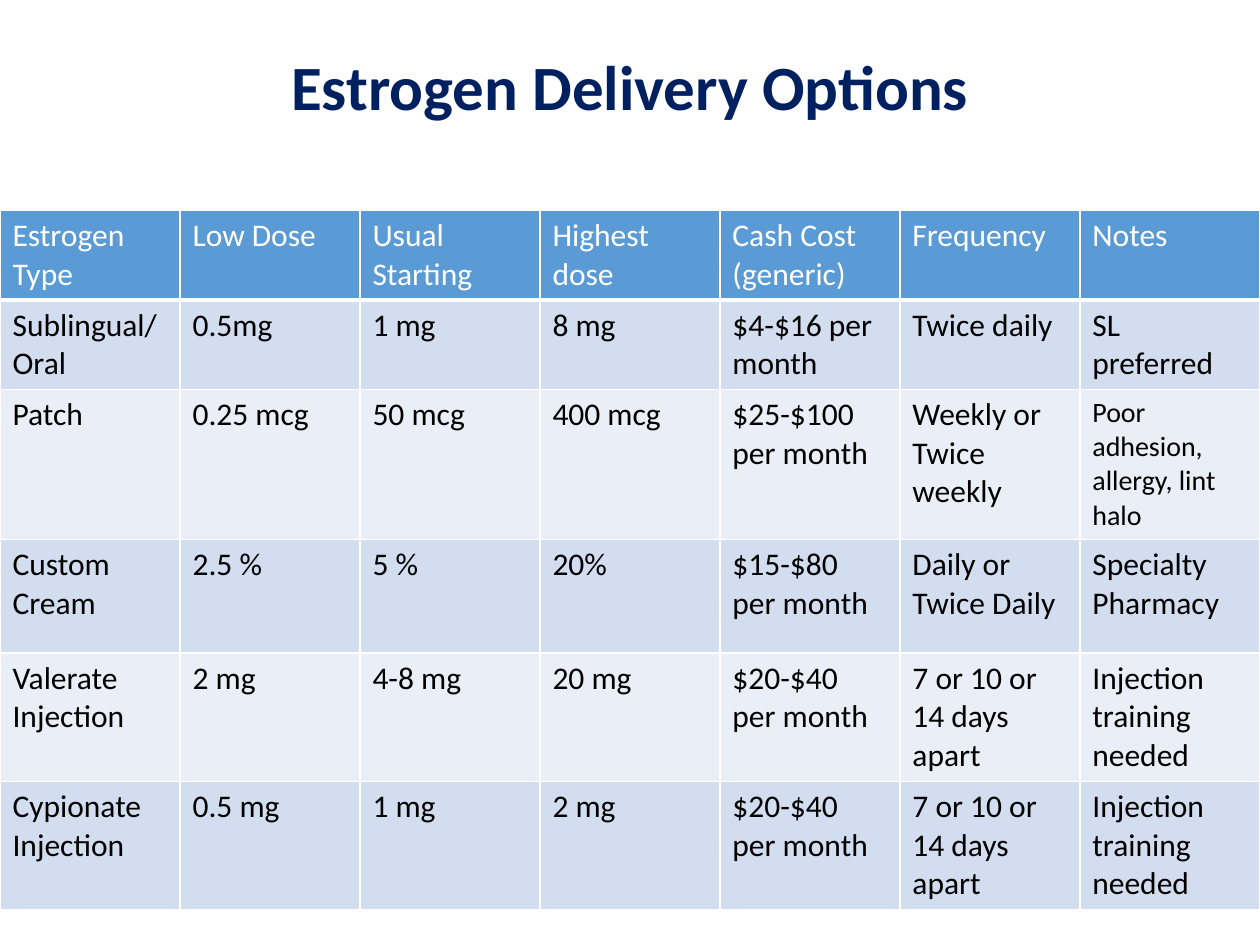
import pptx
import pptx.dml.color
import pptx.enum.text
import pptx.oxml
import pptx.oxml.ns
import pptx.util
from pptx.util import Inches

FONT = "Calibri"
HEADER = ["Estrogen Type", "Low Dose", "Usual Starting", "Highest dose",
          "Cash Cost\n(generic)", "Frequency", "Notes"]
OPTIONS = [
    ["Sublingual/Oral", "0.5mg", "1 mg", "8 mg", "$4-$16 per month",
     "Twice daily", "SL preferred"],
    ["Patch", "0.25 mcg", "50 mcg", "400 mcg", "$25-$100 per month",
     "Weekly or Twice weekly", "Poor adhesion, allergy, lint halo"],
    ["Custom Cream", "2.5 %", "5 %", "20%", "$15-$80 per month",
     "Daily or Twice Daily", "Specialty Pharmacy"],
    ["Valerate Injection", "2 mg", "4-8 mg", "20 mg", "$20-$40 per month",
     "7 or 10 or 14 days apart", "Injection training needed"],
    ["Cypionate Injection", "0.5 mg", "1 mg", "2 mg", "$20-$40 per month",
     "7 or 10 or 14 days apart", "Injection training needed"],
]
ROW_HEIGHTS = [0.71, 0.71, 1.19, 0.9, 1.02, 1.02]
SMALL_CELLS = {(2, 6)}


def rgb(color):
    """Return the colour for a hex string."""
    return pptx.dml.color.RGBColor.from_string(color)


def style_font(font, size, color, bold=False):
    """Set the typeface, size, colour and weight of a font."""
    font.name = FONT
    font.size = pptx.util.Pt(size)
    font.bold = bold
    font.color.rgb = rgb(color)


def set_borders(cell, color, bottom_width):
    """Draw a one-point border on a cell, with its own bottom width."""
    tc_pr = cell._tc.get_or_add_tcPr()
    for i, (side, width) in enumerate(
            [("L", 1), ("R", 1), ("T", 1), ("B", bottom_width)]):
        tc_pr.insert(i, pptx.oxml.parse_xml(
            f'<a:ln{side} {pptx.oxml.ns.nsdecls("a")} w="{pptx.util.Pt(width)}">'
            f'<a:solidFill><a:srgbClr val="{color}"/></a:solidFill></a:ln{side}>'))


def add_title(s, left, top, width, height):
    """Add the centred slide title."""
    tf = s.shapes.add_textbox(left, top, width, height).text_frame
    tf.word_wrap = False
    p = tf.paragraphs[0]
    p.text = "Estrogen Delivery Options"
    p.alignment = pptx.enum.text.PP_ALIGN.CENTER
    style_font(p.font, 36, "002060", bold=True)


def fill_cell(cell, text, size, color, fill, bottom_width):
    """Set the text, fill and borders of a table cell."""
    cell.text = text
    for p in cell.text_frame.paragraphs:
        style_font(p.font, size, color)
    cell.fill.solid()
    cell.fill.fore_color.rgb = rgb(fill)
    set_borders(cell, "FFFFFF", bottom_width)


def add_options_table(s, left, top, width, height):
    """Add the table of delivery options with equal columns and banded rows."""
    rows = [HEADER] + OPTIONS
    table = s.shapes.add_table(
        len(rows), len(HEADER), left, top, width, height).table
    for column in table.columns:
        column.width = width // len(HEADER)
    for i, row in enumerate(rows):
        table.rows[i].height = Inches(ROW_HEIGHTS[i])
        fill = "5B9BD5" if i == 0 else ("EAEFF7", "D2DEEF")[i % 2]
        color = "FFFFFF" if i == 0 else "000000"
        for j, text in enumerate(row):
            size = 16 if (i, j) in SMALL_CELLS else 18
            fill_cell(table.cell(i, j), text, size, color, fill,
                      3 if i == 0 else 1)


def main():
    """Build and save the slide."""
    prs = pptx.Presentation()
    prs.slide_width, prs.slide_height = Inches(10), Inches(7.5)
    s = prs.slides.add_slide(prs.slide_layouts[6])
    add_options_table(s, Inches(0), Inches(1.67), prs.slide_width,
                      Inches(sum(ROW_HEIGHTS)))
    add_title(s, Inches(2.18), Inches(0.33), Inches(5.64), Inches(0.71))
    prs.save("out.pptx")


if __name__ == "__main__":
    main()
